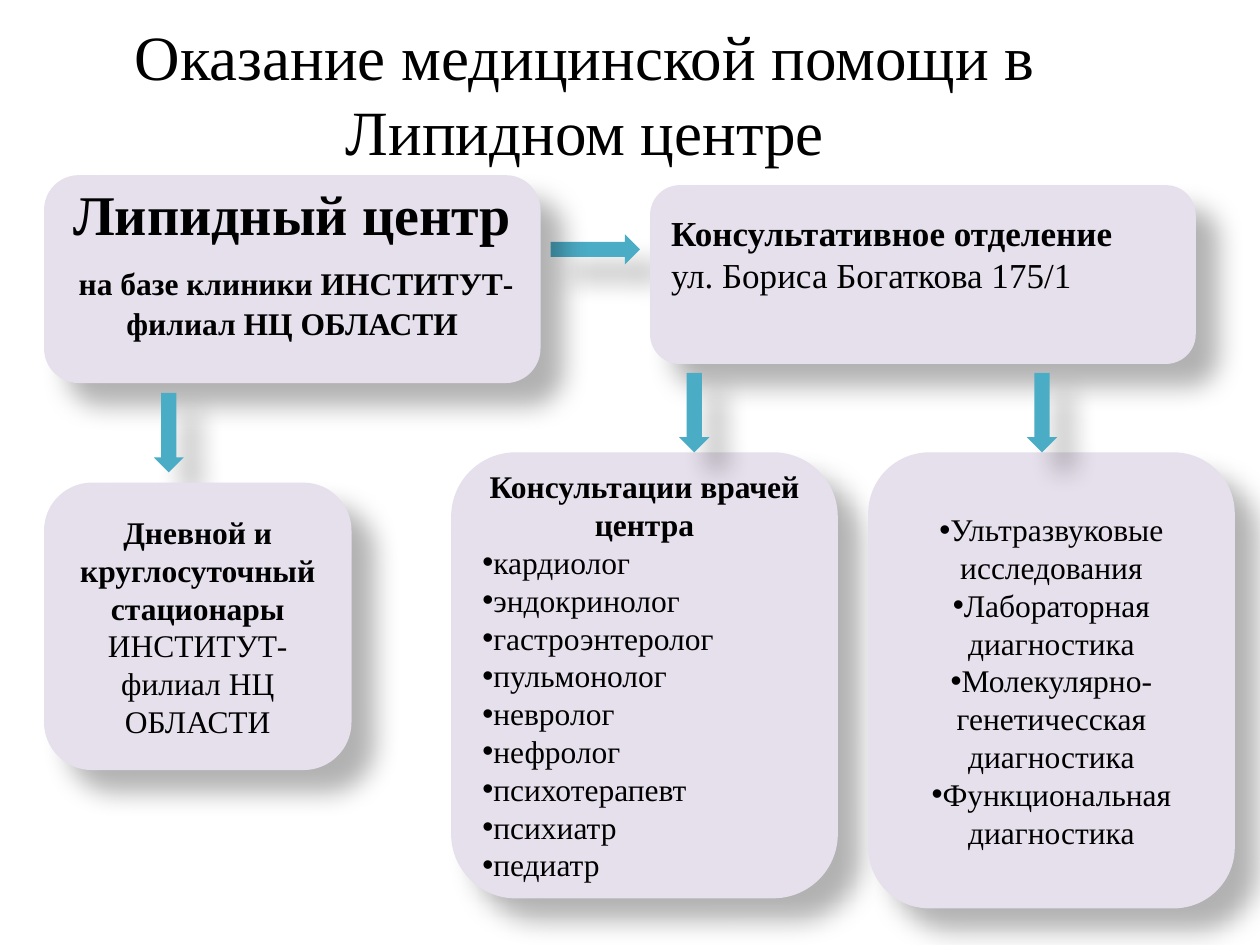
from lxml import etree
from pptx import Presentation
from pptx.dml.color import RGBColor
from pptx.enum.shapes import MSO_SHAPE
from pptx.enum.text import MSO_ANCHOR, PP_ALIGN
from pptx.oxml.ns import qn
from pptx.util import Pt

ROUNDED = MSO_SHAPE.ROUNDED_RECTANGLE
RIGHT_ARROW = MSO_SHAPE.RIGHT_ARROW
DOWN_ARROW = MSO_SHAPE.DOWN_ARROW
MIDDLE = MSO_ANCHOR.MIDDLE
LEFT = PP_ALIGN.LEFT
CENTER = PP_ALIGN.CENTER

COLORS = {"text": "000000", "box": "E6E0EC", "arrow": "4BACC6", "shadow": "000000"}
FONT = "Times New Roman"


def add_block(kind, left, top, width, height, color):
    block = page.shapes.add_shape(kind, Pt(left), Pt(top), Pt(width), Pt(height))
    block.fill.solid()
    block.fill.fore_color.rgb = RGBColor.from_string(COLORS[color])
    block.line.fill.background()
    block.shadow.inherit = False
    effects = block._element.spPr.find(qn("a:effectLst"))
    shadow = etree.SubElement(effects, qn("a:outerShdw"), blurRad=str(Pt(15)),
                              dist=str(Pt(18)), dir="2700000", algn="tl", rotWithShape="0")
    shade = etree.SubElement(shadow, qn("a:srgbClr"), val=COLORS["shadow"])
    etree.SubElement(shade, qn("a:alpha"), val="30000")
    return block


def write_lines(box, lines):
    frame = box.text_frame
    frame.word_wrap = True
    frame.vertical_anchor = MIDDLE
    for number, (text, size, bold, align, bullet) in enumerate(lines):
        para = frame.paragraphs[0] if number == 0 else frame.add_paragraph()
        para.text = text
        para.alignment = align
        para.font.name = FONT
        para.font.size = Pt(size)
        para.font.bold = bold
        para.font.color.rgb = RGBColor.from_string(COLORS["text"])
        if bullet:
            settings = para._p.get_or_add_pPr()
            settings.set("marL", "0")
            settings.set("indent", "0")
            mark_font = etree.Element(qn("a:buFont"), typeface="Arial")
            mark = etree.Element(qn("a:buChar"), char="•")
            settings.insert(0, mark_font)
            settings.insert(1, mark)
    return frame


deck = Presentation()
deck.slide_width = Pt(720)
deck.slide_height = Pt(540)
page = deck.slides.add_slide(deck.slide_layouts[6])

title = page.shapes.add_textbox(Pt(-42.5), Pt(22.3), Pt(762.5), Pt(61.2))
write_lines(title, [("Оказание медицинской помощи в \vЛипидном центре ", 36, False, CENTER, False)])

add_block(RIGHT_ARROW, 314.6, 133.9, 51.1, 17.3, "arrow")

center = add_block(ROUNDED, 25.2, 100.1, 283.7, 118.8, "box")
frame = write_lines(center, [
    ("Липидный центр", 32, True, CENTER, False),
    (" на базе клиники ИНСТИТУТ-филиал НЦ ОБЛАСТИ", 18, True, CENTER, False),
])
frame.margin_bottom = Pt(27)
for para in frame.paragraphs:
    para.line_spacing = 1.07
    para.space_after = Pt(8)

department = add_block(ROUNDED, 371.5, 105.8, 311.8, 102.2, "box")
frame = write_lines(department, [
    ("Консультативное отделение\u00a0", 20, True, LEFT, False),
    ("ул. Бориса Богаткова 175/1", 20, False, LEFT, False),
])
frame.margin_bottom = Pt(27.6)

doctors = ["кардиолог", "эндокринолог", "гастроэнтеролог", "пульмонолог", "невролог",
           "нефролог", "психотерапевт", "психиатр", "педиатр"]
consultations = add_block(ROUNDED, 257.8, 258.5, 221, 254.9, "box")
write_lines(consultations, [("Консультации врачей центра", 18, True, CENTER, False)]
            + [(doctor, 18, False, LEFT, True) for doctor in doctors])

add_block(DOWN_ARROW, 87.8, 224.6, 17.3, 45.4, "arrow")

hospital = add_block(ROUNDED, 25.2, 275.8, 175.7, 164.2, "box")
frame = write_lines(hospital, [("Дневной и круглосуточный стационары ", 18, None, CENTER, False)])
para = frame.paragraphs[0]
para.runs[0].font.bold = True
span = para.add_run()
span.text = "ИНСТИТУТ-филиал НЦ ОБЛАСТИ"

tests = ["Ультразвуковые исследования", "Лабораторная диагностика",
         "Молекулярно-генетичесская диагностика", "Функциональная диагностика"]
diagnostics = add_block(ROUNDED, 496.1, 258.5, 209.5, 260.6, "box")
write_lines(diagnostics, [(test, 18, False, CENTER, True) for test in tests])

for left in (586.8, 388.1):
    add_block(DOWN_ARROW, left, 213.1, 17.3, 45.4, "arrow")

deck.save("out.pptx")
